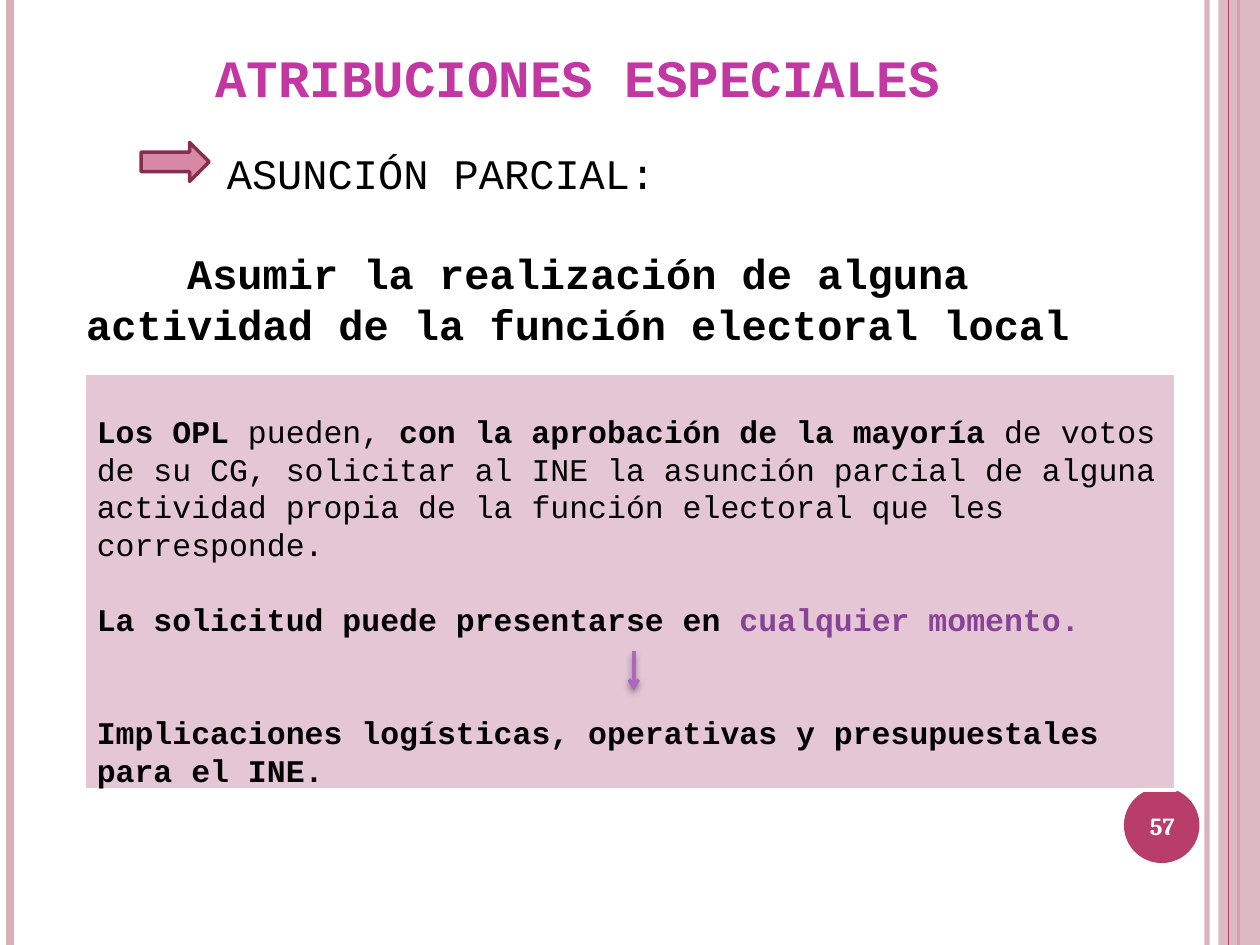
from dataclasses import dataclass

from lxml import etree
from pptx import Presentation
from pptx.dml.color import RGBColor
from pptx.enum.shapes import MSO_CONNECTOR, MSO_SHAPE
from pptx.enum.text import MSO_ANCHOR, MSO_AUTO_SIZE, PP_ALIGN
from pptx.oxml.ns import qn
from pptx.util import Inches, Pt

LEFT, CENTER = PP_ALIGN.LEFT, PP_ALIGN.CENTER
TOP, MIDDLE, BOTTOM = MSO_ANCHOR.TOP, MSO_ANCHOR.MIDDLE, MSO_ANCHOR.BOTTOM
RECT, OVAL, ARROW = MSO_SHAPE.RECTANGLE, MSO_SHAPE.OVAL, MSO_SHAPE.RIGHT_ARROW
STRAIGHT = MSO_CONNECTOR.STRAIGHT
NO_FIT = MSO_AUTO_SIZE.NONE


@dataclass(frozen=True)
class Theme:
    font: str = "Courier New"
    serif: str = "Cambria"
    ink: str = "000000"
    white: str = "FFFFFF"
    title: str = "C337A2"
    rose: str = "D8AFB9"
    berry: str = "B83D68"
    pink: str = "D788A3"
    wine: str = "882D4D"
    panel: str = "E5C6D5"
    plum: str = "874396"
    violet: str = "AC66BB"
    head: int = 30
    lead: int = 24
    note: int = 18
    page: int = 14
    pitch: float = 1.19  # line height as a share of the type size


def add(parent, tag, **attrs):
    return etree.SubElement(parent, qn(tag), attrs)


class Page:
    def __init__(self, slide, theme):
        self.slide, self.theme = slide, theme

    def paint(self, fill, color, alpha=100):
        fill.solid()
        fill.fore_color.rgb = RGBColor.from_string(color)
        if alpha < 100:
            node = fill._xPr.find(".//" + qn("a:srgbClr"))
            add(node, "a:alpha", val=str(alpha * 1000))

    def shape(self, kind, box, fill, line=None, width=2, alpha=100):
        item = self.slide.shapes.add_shape(kind, *map(Inches, box))
        item.shadow.inherit = False
        self.paint(item.fill, fill, alpha)
        if line:
            self.paint(item.line.fill, line)
            item.line.width = Pt(width)
        else:
            item.line.fill.background()
        return item

    def line(self, start, end, color, width, alpha=100):
        """Draw a line and return it with its empty effect list."""
        item = self.slide.shapes.add_connector(
            STRAIGHT, *map(Inches, start + end))
        self.paint(item.line.fill, color, alpha)
        item.line.width = Pt(width)
        return item, add(item._element.spPr, "a:effectLst")

    def arrow(self, start, end, color, width):
        item, effects = self.line(start, end, color, width)
        add(item.line._get_or_add_ln(), "a:tailEnd", type="arrow")
        shade = add(effects, "a:outerShdw", blurRad=str(Pt(4)),
                    dist=str(Pt(2)), dir="5400000", rotWithShape="0")
        tint = add(shade, "a:srgbClr", val=self.theme.ink)
        add(tint, "a:alpha", val="40000")

    def holder(self, index, box):
        item = self.slide.placeholders[index]
        item.left, item.top, item.width, item.height = map(Inches, box)
        return item

    def label(self, box):
        return self.slide.shapes.add_textbox(*map(Inches, box))

    def text(self, item, paras, size, anchor=TOP, font=None, foot=0.05):
        """Fill item from (align, blank lines above, left margin, runs)."""
        frame = item.text_frame
        frame.word_wrap, frame.auto_size = True, NO_FIT
        frame.vertical_anchor = anchor
        frame.margin_bottom = Inches(foot)
        for i, (align, gap, margin, runs) in enumerate(paras):
            para = frame.add_paragraph() if i else frame.paragraphs[0]
            para.alignment = align
            para.space_before = Pt(round(gap * size * self.theme.pitch, 1))
            props = para._p.get_or_add_pPr()
            props.set("marL", str(Inches(margin)))
            props.set("indent", "0")
            add(props, "a:buNone")
            for words, bold, color in runs:
                run = para.add_run()
                run.text = words
                run.font.name = font or self.theme.font
                run.font.size = Pt(size)
                run.font.bold = bold
                run.font.color.rgb = RGBColor.from_string(color)


def border(page):
    t = page.theme
    for x, color, width, alpha in (
            (9.58, t.rose, 3, 93), (0.08, t.rose, 4.5, 100),
            (9.83, t.berry, 1.5, 100)):
        page.line((x, 0), (x, 7.5), color, width, alpha)
    page.shape(RECT, (9.67, 0, 0.33, 7.5), t.rose, alpha=87)
    page.line((9.75, 0), (9.75, 7.5), t.berry, 0.75)
    page.shape(OVAL, (8.92, 6.25, 0.6, 0.6), t.berry)
    page.text(page.label((8.89, 6.27, 0.67, 0.57)),
              [(CENTER, 0, 0, [("57", True, t.white)])],
              t.page, MIDDLE, t.serif)


def content(page):
    t = page.theme
    page.text(page.holder(0, (0.5, 0.3, 8.17, 0.61)),
              [(CENTER, 0, 0, [("ATRIBUCIONES ESPECIALES", True, t.title)])],
              t.head, BOTTOM)
    page.text(page.holder(1, (0.5, 1.12, 8.17, 5.96)), [
        (LEFT, 0, 1.2, [("ASUNCIÓN PARCIAL:", False, t.ink)]),
        (CENTER, 1, 0, [("Asumir la realización de alguna actividad de la "
                         "función electoral local", True, t.ink)]),
    ], t.lead)
    page.shape(ARROW, (1.12, 1.13, 0.54, 0.31), t.pink, t.wine)

    panel = page.shape(RECT, (0.67, 2.96, 8.66, 3.31), t.panel, t.white)
    page.text(panel, [
        (LEFT, 0, 0, [
            ("Los OPL ", True, t.ink),
            ("pueden, ", False, t.ink),
            ("con la aprobación de la mayoría ", True, t.ink),
            ("de votos de su CG, solicitar al INE la asunción parcial de "
             "alguna actividad propia de la función electoral que les "
             "corresponde.", False, t.ink)]),
        (LEFT, 1, 0, [
            ("La solicitud puede presentarse en ", True, t.ink),
            ("cualquier momento.", True, t.plum)]),
        (LEFT, 2, 0, [
            ("Implicaciones logísticas, operativas y presupuestales para "
             "el INE.", True, t.ink)]),
    ], t.note, BOTTOM, foot=0.01)
    page.arrow((5.03, 5.17), (5.03, 5.48), t.violet, 2)


def main():
    deck = Presentation()
    deck.slide_width, deck.slide_height = Inches(10), Inches(7.5)
    page = Page(deck.slides.add_slide(deck.slide_layouts[1]), Theme())
    border(page)
    content(page)
    deck.save("out.pptx")


if __name__ == "__main__":
    main()
